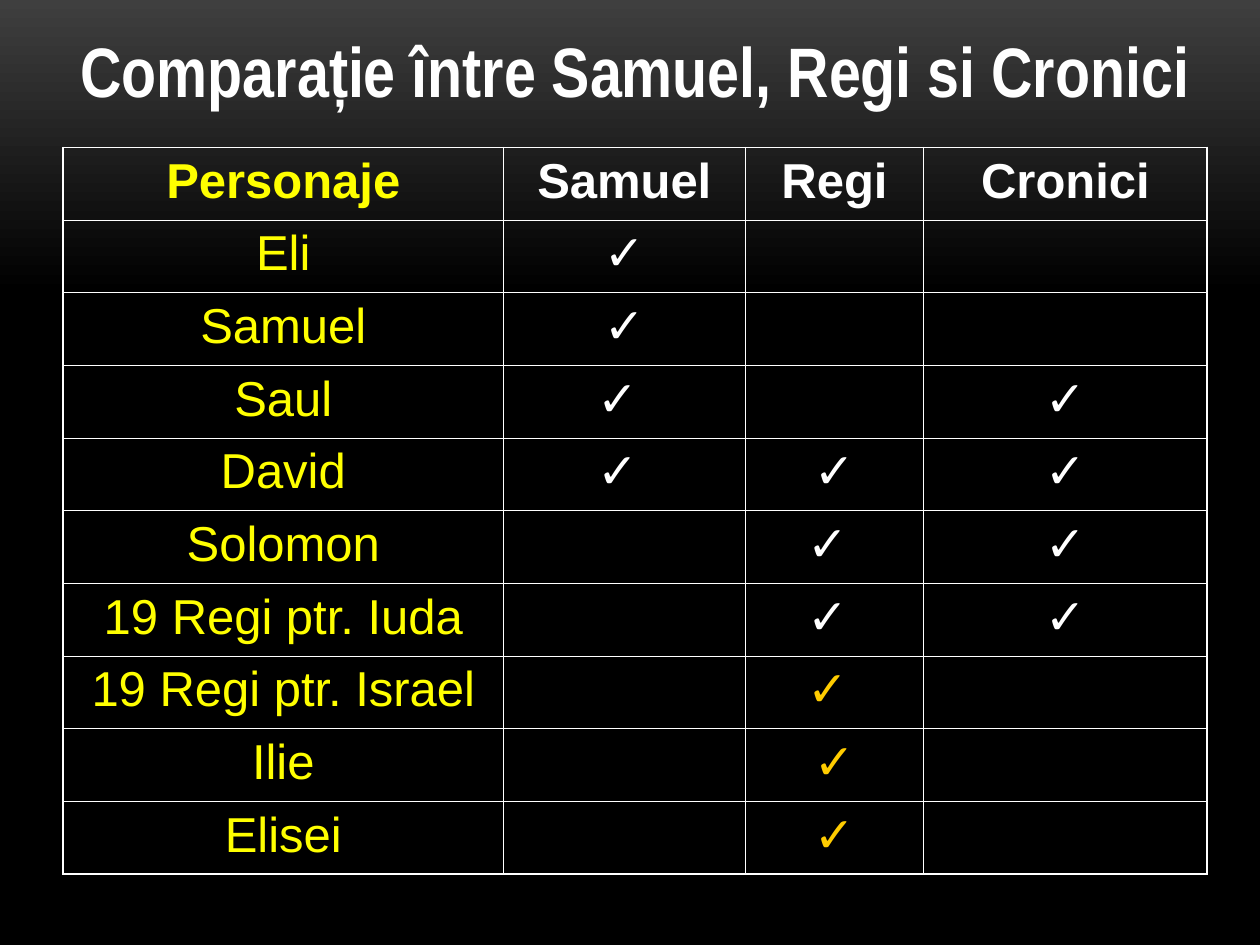
from lxml import etree
from pptx import Presentation
from pptx.dml.color import RGBColor
from pptx.enum.text import MSO_ANCHOR, PP_ALIGN
from pptx.oxml.ns import qn
from pptx.util import Inches, Pt

CENTER = PP_ALIGN.CENTER
MIDDLE = MSO_ANCHOR.MIDDLE

WHITE, YELLOW, GOLD = "FFFFFF", "FFFF00", "FFCC00"
THIN, THICK = 0.45, 1.08

HEAD = ["Personaje", "Samuel", "Regi", "Cronici"]
# Name, then the marks under Samuel, Regi and Cronici
ROWS = [
    ["Eli", "✓", "", ""],
    ["Samuel", "✓", "", ""],
    ["Saul", "✓ ", "", "✓"],
    ["David", "✓ ", "✓", "✓"],
    ["Solomon", "", "✓ ", "✓"],
    ["19 Regi ptr. Iuda", "", "✓ ", "✓"],
    ["19 Regi ptr. Israel", "", "✓ ", ""],
    ["Ilie", "", "✓", ""],
    ["Elisei", "", "✓", ""],
]
ISRAEL = 7  # first row with gold marks, the only one in bold


def paint(code):
    return RGBColor.from_string(code)


class Deck:
    def __init__(self, wide, high):
        self.prs = Presentation()
        self.prs.slide_width = Inches(wide)
        self.prs.slide_height = Inches(high)
        self.slide = self.prs.slides.add_slide(self.prs.slide_layouts[6])

    def box(self, x, y, w, h):
        """Turn shares of the slide into lengths."""
        wide, high = self.prs.slide_width, self.prs.slide_height
        return int(x * wide), int(y * high), int(w * wide), int(h * high)

    def shade(self, stops):
        fill = self.slide.background.fill
        fill.gradient()
        fill.gradient_angle = 270
        for stop, (place, code) in zip(fill.gradient_stops, stops):
            stop.position = place
            stop.color.rgb = paint(code)

    def label(self, frame, text, size, color, bold=False, face="Arial"):
        para = frame.paragraphs[0]
        para.text = text
        para.alignment = CENTER
        font = para.font
        font.name, font.size, font.bold = face, Pt(size), bold
        font.color.rgb = paint(color)

    def title(self, text, *area):
        frame = self.slide.shapes.add_textbox(*self.box(*area)).text_frame
        frame.word_wrap = True
        frame.vertical_anchor = MIDDLE
        self.label(frame, text, 40, WHITE, True, "Arial Narrow")

    def edge(self, cell, side, width):
        line = etree.SubElement(cell._tc.get_or_add_tcPr(), qn("a:ln" + side),
                                w=str(Pt(width)))
        fill = etree.SubElement(line, qn("a:solidFill"))
        etree.SubElement(fill, qn("a:srgbClr"), val=WHITE)

    def table(self, data, parts, style, *area):
        """Draw a table; parts are column widths, style gives colour and weight."""
        x, y, w, h = self.box(*area)
        rows, cols = len(data), len(parts)
        grid = self.slide.shapes.add_table(rows, cols, x, y, w, h).table
        grid.first_row = grid.horz_banding = False
        for col, part in zip(grid.columns, parts):
            col.width = int(w * part / sum(parts))
        for r, line in enumerate(data):
            for c, text in enumerate(line):
                cell = grid.cell(r, c)
                outer = {"L": c == 0, "R": c == cols - 1,
                         "T": r == 0, "B": r == rows - 1}
                for side, out in outer.items():
                    self.edge(cell, side, THICK if out else THIN)
                cell.fill.background()
                if text:
                    self.label(cell.text_frame, text, 28, *style(r, c))


def style(row, col):
    if col == 0:
        color = YELLOW
    else:
        color = GOLD if row >= ISRAEL else WHITE
    return color, row == 0 or (row == ISRAEL and col > 0)


def main():
    deck = Deck(10, 7.5)
    # Dark background
    deck.shade([(0, "3F3F3F"), (0.31, "000000")])
    # Title
    deck.title("Comparație între Samuel, Regi si Cronici",
               0.25 / 10, 0.17 / 7.5, 9.58 / 10, 0.77 / 7.5)
    # Who appears in which book
    deck.table([HEAD] + ROWS, [3.5, 1.92, 1.42, 2.25], style,
               0.5 / 10, 1.17 / 7.5, 9.08 / 10, 5.77 / 7.5)
    deck.prs.save("out.pptx")


if __name__ == "__main__":
    main()
